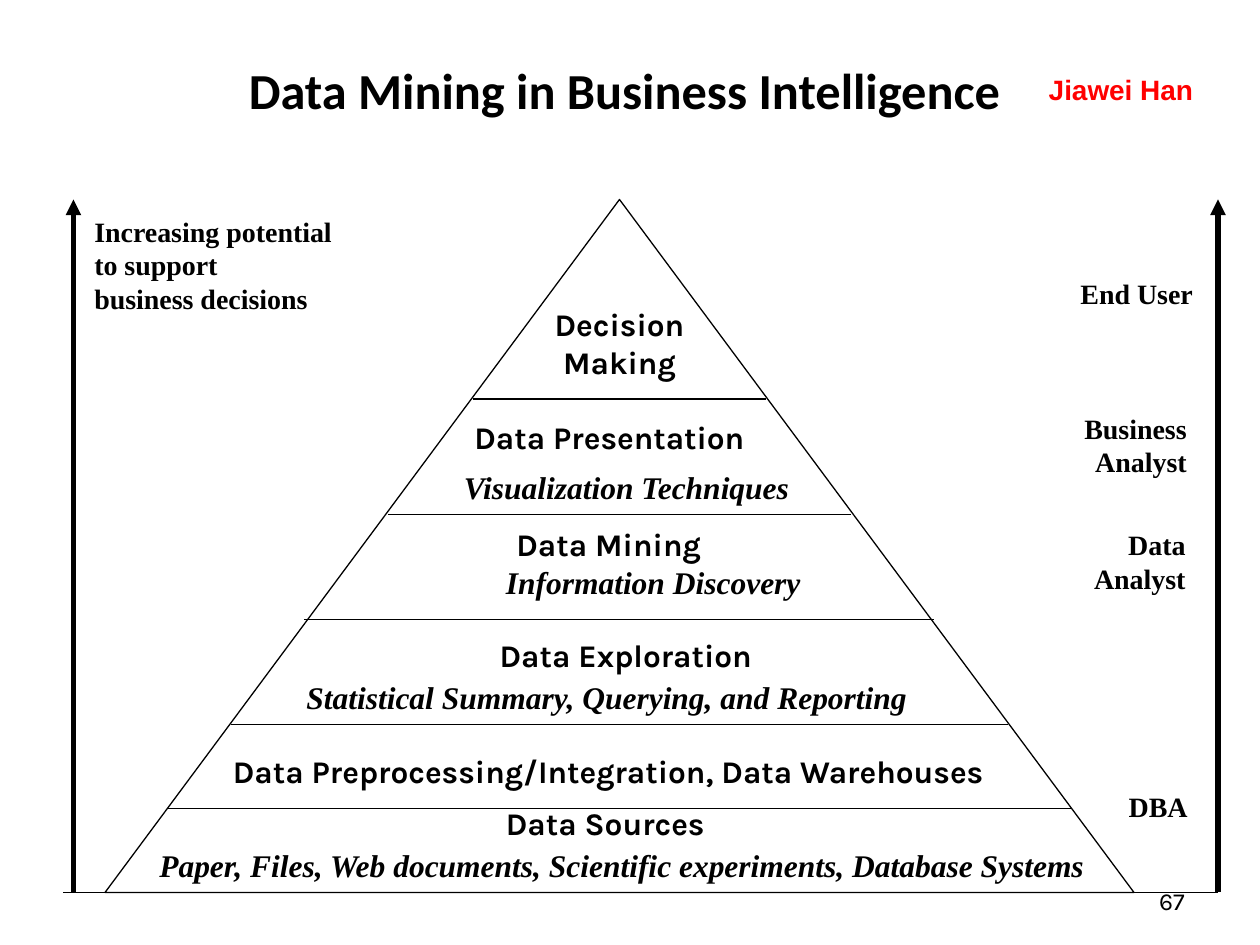
"""Build the slide of the business intelligence pyramid."""
from dataclasses import dataclass

from lxml import etree
from pptx import Presentation
from pptx.dml.color import RGBColor
from pptx.enum.shapes import MSO_CONNECTOR, MSO_SHAPE
from pptx.enum.text import MSO_ANCHOR, MSO_AUTO_SIZE, PP_ALIGN
from pptx.oxml.ns import qn
from pptx.slide import Slide
from pptx.util import Inches, Pt

LEFT, MID, RIGHT = PP_ALIGN.LEFT, PP_ALIGN.CENTER, PP_ALIGN.RIGHT
TOP, CENTRE = MSO_ANCHOR.TOP, MSO_ANCHOR.MIDDLE
GROW = MSO_AUTO_SIZE.SHAPE_TO_FIT_TEXT
STRAIGHT = MSO_CONNECTOR.STRAIGHT
PEAK = MSO_SHAPE.FLOWCHART_EXTRACT
WIDE, HIGH = Inches(10), Inches(7.5)
COLS = 120
CELL = WIDE / COLS


@dataclass(frozen=True)
class Theme:
    ink: RGBColor = RGBColor(0, 0, 0)
    red: RGBColor = RGBColor(255, 0, 0)
    head: str = "Calibri"
    sans: str = "Karla"
    serif: str = "Times New Roman"
    plain: str = "Arial"
    title: float = 28.8
    body: float = 18
    note: float = 16
    page: float = 14
    thin: float = 0.75
    thick: float = 3


@dataclass(frozen=True)
class Box:
    x: float
    y: float
    w: float
    h: float = 4.8


@dataclass(frozen=True)
class Label:
    text: str
    box: Box
    align: PP_ALIGN = LEFT
    wrap: bool = False


THEME = Theme()
APEX, TIP, BASE, HALF = 59, 19, 85, 49
BANDS = (77, 69, 59, 49, 38)
ARROWS = (7, 116)

STEPS = (
    Label("Decision Making", Box(51, 28.5, 16, 8.4), MID, True),
    Label("Data Presentation", Box(44, 39.2, 29.6)),
    Label("Data Mining", Box(48, 49.4, 23.4), wrap=True),
    Label("Data Exploration", Box(44.2, 60, 30.8), MID, True),
    Label("Data Preprocessing/Integration, Data Warehouses", Box(21, 71, 79.1)),
    Label("Data Sources", Box(47, 76, 22.3)),
)
TASKS = (
    Label("Visualization Techniques", Box(43, 44, 33.8)),
    Label("Information Discovery", Box(47, 53, 30.5)),
    Label("Statistical Summary, Querying, and Reporting", Box(28, 64, 60), wrap=True),
    Label("Paper, Files, Web documents, Scientific experiments, Database Systems",
          Box(14, 80, 93.4), wrap=True),
)
NOTES = (
    Label("Increasing potential\nto support\nbusiness decisions", Box(7.8, 19.8, 25.2, 10.8)),
    Label("End User", Box(101.6, 25.7, 13.2, 4.4), RIGHT),
    Label("Business\nAnalyst", Box(101.8, 38.6, 12.4, 7.7), RIGHT),
    Label("Data\nAnalyst", Box(102.8, 49.7, 11.3, 7.7), RIGHT),
    Label("DBA", Box(106.3, 74.6, 8, 4.4), RIGHT),
)


def span(*cells: float) -> list[int]:
    """Turn grid cells into slide lengths."""
    return [round(cell * CELL) for cell in cells]


def write(slide: Slide, label: Label, *, font: str, size: float,
          color: RGBColor = THEME.ink, bold: bool = True, slant: bool = False,
          anchor: MSO_ANCHOR = TOP, grow: bool = True) -> None:
    """Add a text box in one format, one paragraph for each line."""
    box = label.box
    frame = slide.shapes.add_textbox(*span(box.x, box.y, box.w, box.h)).text_frame
    frame.text = label.text
    frame.word_wrap = label.wrap
    frame.vertical_anchor = anchor
    if grow:
        frame.auto_size = GROW
    for para in frame.paragraphs:
        para.alignment = label.align
        for run in para.runs:
            style = run.font
            style.name, style.size = font, Pt(size)
            style.bold, style.italic = bold, slant
            style.color.rgb = color


def rule(slide: Slide, start: tuple[float, float], end: tuple[float, float],
         *, width: float = THEME.thin, arrow: bool = False) -> None:
    """Draw a straight line, with an arrowhead at its end if asked."""
    link = slide.shapes.add_connector(STRAIGHT, *span(*start, *end))
    link.line.color.rgb = THEME.ink
    link.line.width = Pt(width)
    if arrow:
        etree.SubElement(link.line._get_or_add_ln(), qn("a:tailEnd"), type="triangle")
    etree.SubElement(link._element.spPr, qn("a:effectLst"))


def cone(slide: Slide) -> None:
    """Draw the pyramid and the lines between its layers."""
    shape = slide.shapes.add_shape(PEAK, *span(APEX - HALF, TIP, 2 * HALF, BASE - TIP))
    shape.shadow.inherit = False
    shape.fill.background()
    shape.line.color.rgb = THEME.ink
    shape.line.width = Pt(THEME.thin)
    for row in BANDS:
        reach = round(HALF * (row - TIP) / (BASE - TIP))
        rule(slide, (APEX - reach, row), (APEX + reach, row))


def main() -> None:
    """Build and save the deck."""
    deck = Presentation()
    deck.slide_width, deck.slide_height = WIDE, HIGH
    slide = deck.slides.add_slide(deck.slide_layouts[6])
    write(slide, Label("67", Box(86, 83.4, 28), RIGHT, True), font=THEME.sans,
          size=THEME.page, bold=False, anchor=CENTRE, grow=False)
    write(slide, Label("Data Mining in Business Intelligence", Box(2.5, 5, 114, 7), MID, True),
          font=THEME.head, size=THEME.title, anchor=CENTRE, grow=False)
    cone(slide)
    for col in ARROWS:
        rule(slide, (col, BASE), (col, TIP), width=THEME.thick, arrow=True)
    for note in NOTES:
        write(slide, note, font=THEME.serif, size=THEME.note)
    for step in STEPS:
        write(slide, step, font=THEME.sans, size=THEME.body)
    for task in TASKS:
        write(slide, task, font=THEME.serif, size=THEME.body, slant=True)
    rule(slide, (6, BASE), (ARROWS[-1], BASE))
    write(slide, Label("Jiawei Han", Box(86.8, 6.1, 28), RIGHT, True), font=THEME.plain,
          size=THEME.note, color=THEME.red, anchor=CENTRE, grow=False)
    deck.save("out.pptx")


if __name__ == "__main__":
    main()
